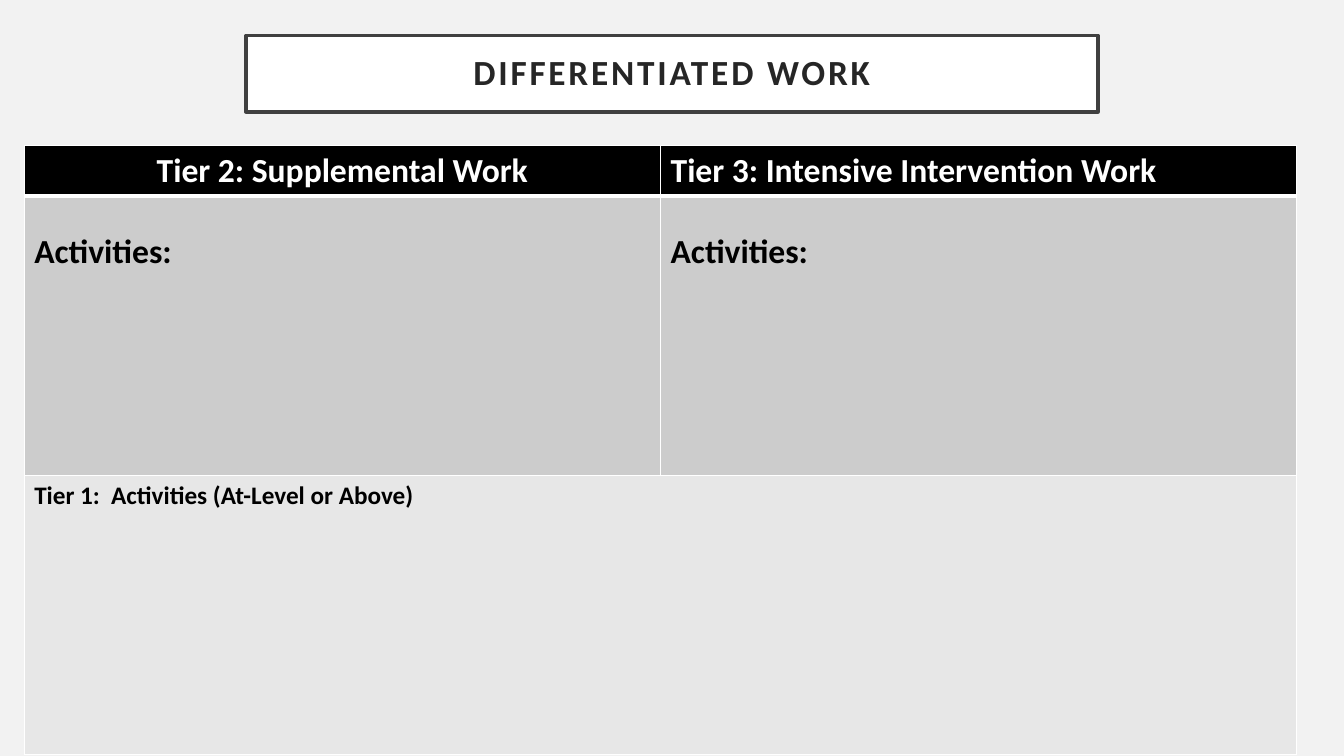
from lxml.etree import SubElement
from pptx import Presentation
from pptx.dml.color import RGBColor
from pptx.enum.text import MSO_ANCHOR, MSO_AUTO_SIZE, PP_ALIGN
from pptx.oxml.ns import qn
from pptx.util import Inches, Pt

WIDE, HIGH = Inches(13.33), Inches(7.5)
ROWS = (0.5, 2.77, 2.77)
FILLS = ("000000", "CCCCCC", "E7E7E7")
INKS = ("FFFFFF", "000000", "000000")
CELLS = (
    (0, 0, "Tier 2: Supplemental Work", 24, PP_ALIGN.CENTER, 0.05),
    (0, 1, "Tier 3: Intensive Intervention Work", 24, PP_ALIGN.LEFT, 0.05),
    (1, 0, "Activities:", 24, PP_ALIGN.LEFT, 0.35),
    (1, 1, "Activities:", 24, PP_ALIGN.LEFT, 0.35),
    (2, 0, "Tier 1:  Activities (At-Level or Above)", 18, PP_ALIGN.LEFT, 0.05),
)


def paint(item, tone):
    """Give a fill or line format a solid hex colour."""
    item.solid()
    item.fore_color.rgb = RGBColor.from_string(tone)


def apply(item, style):
    """Set each attribute named in a style dict."""
    for name, value in style.items():
        setattr(item, name, value)


def write(frame, text, size, tone, align):
    """Write one bold line of text and return its run."""
    line = frame.paragraphs[0]
    line.alignment = align
    run = line.add_run()
    run.text = text
    apply(run.font, {"name": "Calibri", "size": Pt(size), "bold": True})
    run.font.color.rgb = RGBColor.from_string(tone)
    return run


def edge(cell, side, width):
    """Draw one white border of a cell."""
    line = SubElement(cell._tc.get_or_add_tcPr(), qn(f"a:ln{side}"), w=str(Pt(width)))
    fill = SubElement(line, qn("a:solidFill"))
    SubElement(fill, qn("a:srgbClr"), val="FFFFFF")


def add_title(slide, text):
    """Place and format the framed title."""
    title = slide.shapes.title
    apply(title, {"left": int(WIDE * 0.183), "top": int(HIGH * 0.047),
                  "width": int(WIDE * 0.634), "height": int(HIGH * 0.101)})
    paint(title.fill, "FFFFFF")
    paint(title.line.fill, "404040")
    title.line.width = Pt(2.5)
    frame = title.text_frame
    sides = ("left", "right", "top", "bottom")
    apply(frame, {f"margin_{side}": Inches(0.2) for side in sides})
    apply(frame, {"word_wrap": True, "auto_size": MSO_AUTO_SIZE.NONE,
                  "vertical_anchor": MSO_ANCHOR.MIDDLE})
    run = write(frame, text, 25.2, "262626", PP_ALIGN.CENTER)
    run.font._element.set("spc", "200")
    frame.paragraphs[0].line_spacing = 0.9


def add_grid(slide):
    """Add the table of tiers."""
    table = slide.shapes.add_table(
        len(ROWS), 2, int(WIDE * 0.018), int(HIGH * 0.192),
        int(WIDE * 0.947), Inches(sum(ROWS))).table
    for r, height in enumerate(ROWS):
        table.rows[r].height = Inches(height)
        for cell in table.rows[r].cells:
            for side, width in zip("LRTB", (1, 1, 3 if r == 1 else 1, 3 if r == 0 else 1)):
                edge(cell, side, width)
            paint(cell.fill, FILLS[r])
    table.cell(2, 0).merge(table.cell(2, 1))
    for r, c, text, size, align, top in CELLS:
        cell = table.cell(r, c)
        cell.margin_top = Inches(top)
        write(cell.text_frame, text, size, INKS[r], align)


def main():
    """Build and save the slide."""
    deck = Presentation()
    apply(deck, {"slide_width": WIDE, "slide_height": HIGH})
    slide = deck.slides.add_slide(deck.slide_layouts[5])
    paint(slide.background.fill, "F2F2F2")
    add_title(slide, "DIFFERENTIATED WORK")
    add_grid(slide)
    deck.save("out.pptx")


if __name__ == "__main__":
    main()
